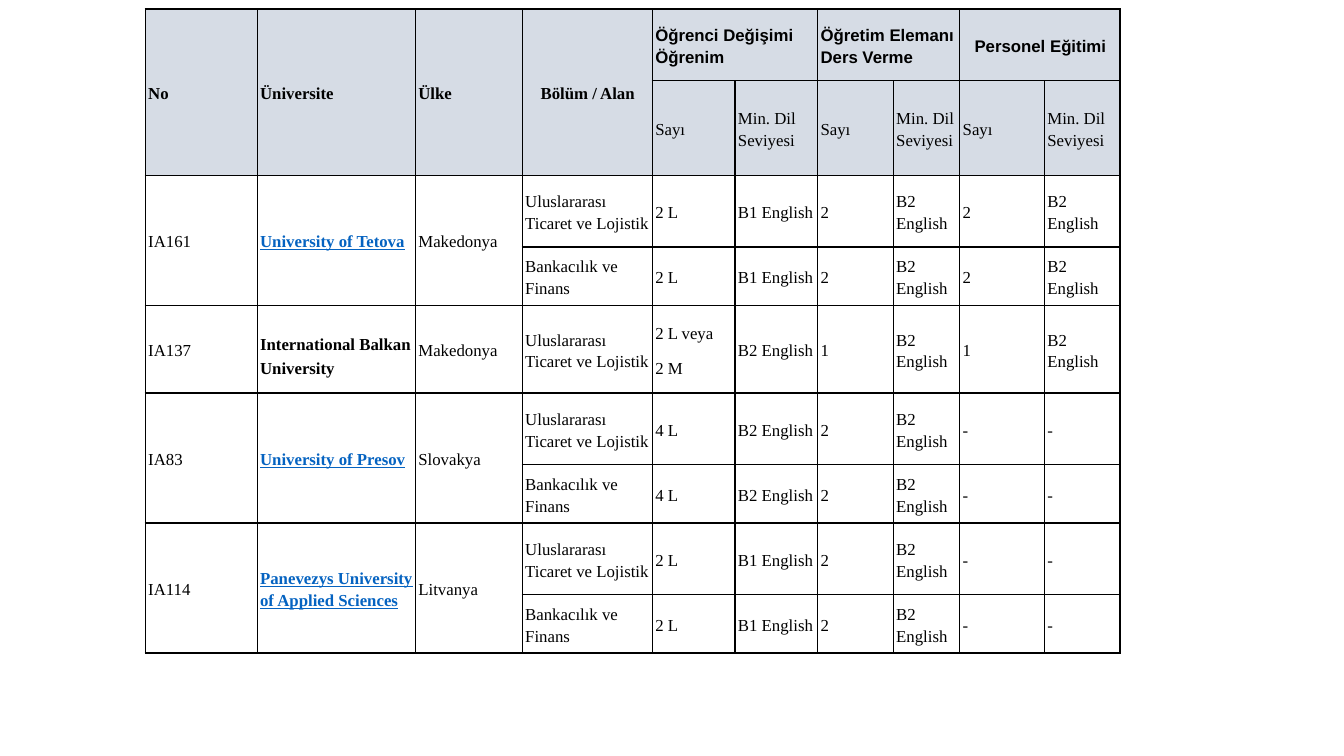
from dataclasses import dataclass

from lxml import etree
from pptx import Presentation
from pptx.dml.color import RGBColor
from pptx.enum import text
from pptx.oxml import ns
from pptx.util import Inches, Pt


@dataclass(frozen=True)
class Theme:
    serif: str = "Times New Roman"
    sans: str = "Arial"
    size: int = 12
    gap_size: int = 20
    ink: str = "000000"
    link: str = "0563C1"
    header: str = "D6DCE5"
    border_pt: int = 1


THEME = Theme()
COL_WIDTHS = [1.11, 1.57, 1.06, 1.29, 0.82, 0.82, 0.75, 0.66, 0.84, 0.75]
HEADER_HEIGHTS = [0.71, 0.94]
TRADE, BANKING = "Uluslararası Ticaret ve Lojistik", "Bankacılık ve Finans"
DEPT_HEIGHTS = {TRADE: 0.71, BANKING: 0.58}
TWO_OPTION_HEIGHT = 0.87
LEFT_HEADINGS = ["No", "Üniversite", "Ülke", "Bölüm / Alan"]
GROUP_HEADINGS = ["Öğrenci Değişimi Öğrenim", "Öğretim Elemanı Ders Verme", "Personel Eğitimi"]
CENTRED = {"Bölüm / Alan", "Personel Eğitimi"}

# number, university, linked, country, then per department:
# name, student places, student level, teaching places, staff places, staff level
PARTNERS = [
    ("IA161", "University of Tetova", True, "Makedonya",
     [(TRADE, "2 L", "B1 English", "2", "2", "B2 English"),
      (BANKING, "2 L", "B1 English", "2", "2", "B2 English")]),
    ("IA137", "International Balkan University", False, "Makedonya",
     [(TRADE, "2 L veya\n2 M", "B2 English", "1", "1", "B2 English")]),
    ("IA83", "University of Presov", True, "Slovakya",
     [(TRADE, "4 L", "B2 English", "2", "-", "-"),
      (BANKING, "4 L", "B2 English", "2", "-", "-")]),
    ("IA114", "Panevezys University of Applied Sciences", True, "Litvanya",
     [(TRADE, "2 L", "B1 English", "2", "-", "-"),
      (BANKING, "2 L", "B1 English", "2", "-", "-")]),
]
TEACHING_LEVEL = "B2 English"


def add_run(p, words, bold=False, font=THEME.serif, size=THEME.size, link=False):
    r = p.add_run()
    r.text = words
    r.font.name, r.font.size = font, Pt(size)
    r.font.bold, r.font.underline = bold, link
    r.font.color.rgb = RGBColor.from_string(THEME.link if link else THEME.ink)


def add_paragraph(cell, first=True):
    tf = cell.text_frame
    p = tf.paragraphs[0] if first else tf.add_paragraph()
    p.line_spacing, p.space_after = 1.15, Pt(10)
    return p


def write(cell, words, **style):
    for i, line in enumerate(words.split("\n")):
        p = add_paragraph(cell, i == 0)
        if words in CENTRED:
            p.alignment = text.PP_ALIGN.CENTER
        add_run(p, line, **style)


def write_university(cell, name, linked):
    """Linked names are one run; the others have a taller space before the last word."""
    if linked:
        write(cell, name, bold=True, link=True)
        return
    start, last = name.rsplit(" ", 1)
    p = add_paragraph(cell)
    add_run(p, start, bold=True)
    add_run(p, " ", size=THEME.gap_size)
    add_run(p, last, bold=True)


def format_cell(cell, fill=None):
    cell.vertical_anchor = text.MSO_ANCHOR.MIDDLE
    cell.margin_left, cell.margin_right = Inches(0.03), Inches(0.02)
    cell.margin_top, cell.margin_bottom = Inches(0.01), 0
    tc_pr = cell._tc.get_or_add_tcPr()
    for side in ("a:lnL", "a:lnR", "a:lnT", "a:lnB"):
        ln = etree.SubElement(tc_pr, ns.qn(side), w=str(Pt(THEME.border_pt)))
        solid = etree.SubElement(ln, ns.qn("a:solidFill"))
        etree.SubElement(solid, ns.qn("a:srgbClr"), val=THEME.ink)
    if fill:
        cell.fill.solid()
        cell.fill.fore_color.rgb = RGBColor.from_string(fill)
    else:
        cell.fill.background()


def fill_header(table):
    for col, heading in enumerate(LEFT_HEADINGS):
        table.cell(0, col).merge(table.cell(1, col))
        write(table.cell(0, col), heading, bold=True)
    for i, heading in enumerate(GROUP_HEADINGS):
        col = len(LEFT_HEADINGS) + 2 * i
        table.cell(0, col).merge(table.cell(0, col + 1))
        write(table.cell(0, col), heading, bold=True, font=THEME.sans)
        write(table.cell(1, col), "Sayı")
        write(table.cell(1, col + 1), "Min. Dil Seviyesi")


def fill_partner(table, row, partner):
    number, university, linked, country, departments = partner
    if len(departments) > 1:
        for col in range(3):
            table.cell(row, col).merge(table.cell(row + len(departments) - 1, col))
    write(table.cell(row, 0), number)
    write_university(table.cell(row, 1), university, linked)
    write(table.cell(row, 2), country)
    for i, (name, places, level, teaching, staff, staff_level) in enumerate(departments):
        values = [name, places, level, teaching, TEACHING_LEVEL, staff, staff_level]
        for col, value in enumerate(values, start=3):
            write(table.cell(row + i, col), value)


def add_partner_table(s, left, top):
    departments = [d for partner in PARTNERS for d in partner[-1]]
    heights = HEADER_HEIGHTS + [
        TWO_OPTION_HEIGHT if "\n" in d[1] else DEPT_HEIGHTS[d[0]] for d in departments]
    table = s.shapes.add_table(len(heights), len(COL_WIDTHS), left, top,
                               Inches(sum(COL_WIDTHS)), Inches(sum(heights))).table
    table.first_row = table.horz_banding = False
    for column, width in zip(table.columns, COL_WIDTHS):
        column.width = Inches(width)
    for i, (row, height) in enumerate(zip(table.rows, heights)):
        row.height = Inches(height)
        for cell in row.cells:
            format_cell(cell, THEME.header if i < len(HEADER_HEIGHTS) else None)
    fill_header(table)
    row = len(HEADER_HEIGHTS)
    for partner in PARTNERS:
        fill_partner(table, row, partner)
        row += len(partner[-1])


def main():
    prs = Presentation()
    prs.slide_width, prs.slide_height = Inches(13.33), Inches(7.5)
    s = prs.slides.add_slide(prs.slide_layouts[6])
    add_partner_table(s, Inches(1.44), Inches(0.09))
    prs.save("out.pptx")


if __name__ == "__main__":
    main()
